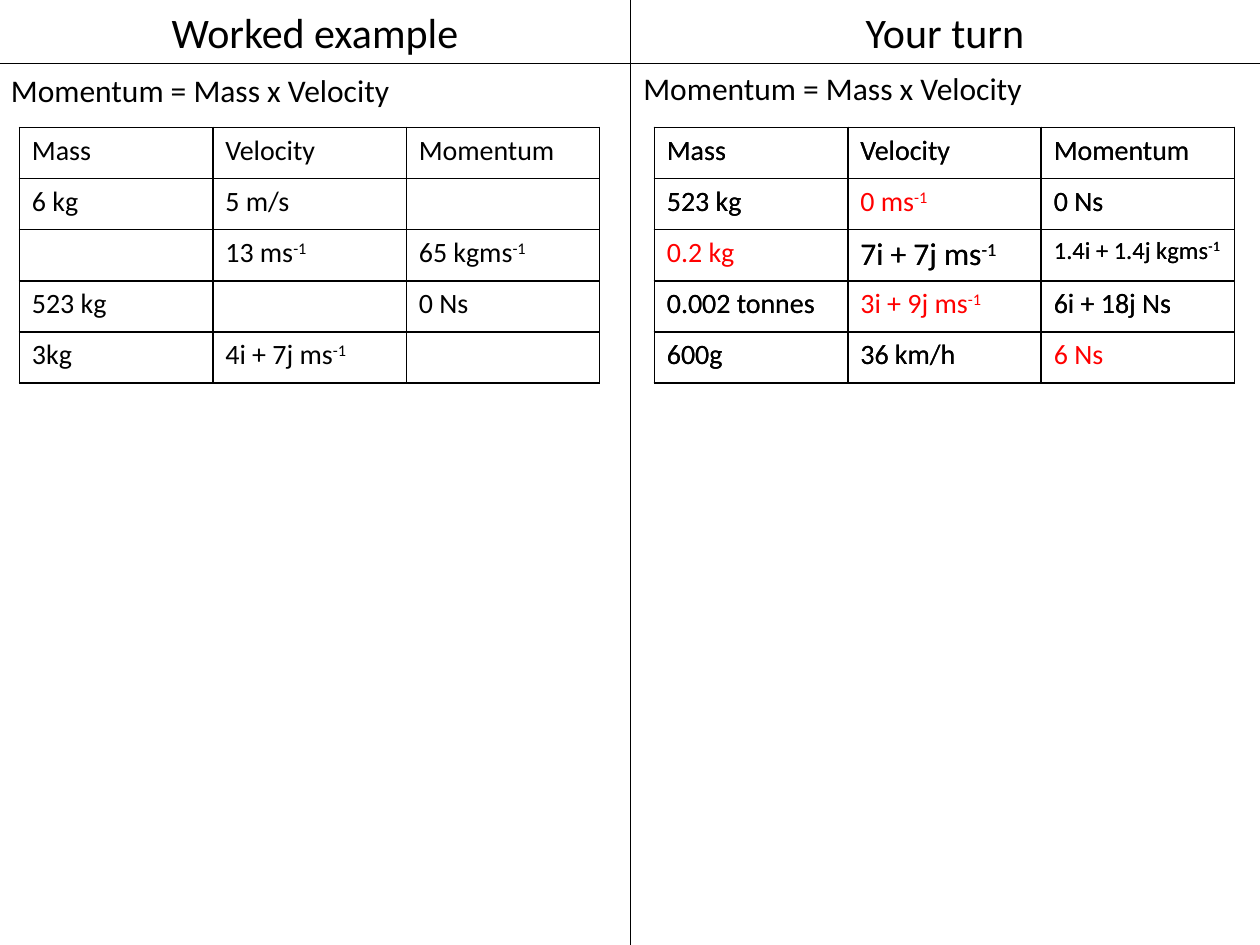
import pptx
import pptx.dml.color
import pptx.enum.shapes
import pptx.enum.text
import pptx.util
from lxml import etree
from pptx.oxml.ns import qn
from pptx.util import Cm, Pt

COLORS = {"black": "000000", "answer": "FF0000"}
FONT = "Calibri"
SLIDE_WIDTH, SLIDE_HEIGHT = 25.4, 19.05
HALF_WIDTH, HEADING_HEIGHT = SLIDE_WIDTH / 2, 1.27
COLUMN_WIDTH, ROW_HEIGHT = 3.9, 1.03


def add_text(paragraph, text, size, color="black"):
    """Write text run by run; the part after ^ is superscript."""
    for index, part in enumerate(text.split("^")):
        run = paragraph.add_run()
        run.text = part
        run.font.name = FONT
        run.font.size = Pt(size)
        run.font.color.rgb = pptx.dml.color.RGBColor.from_string(COLORS[color])
        if index:
            run._r.get_or_add_rPr().set("baseline", "30000")


def add_momentum_table(slide, left, rows, answers=(), sizes=None):
    """Add a bordered table; texts listed in answers are coloured."""
    frame = slide.shapes.add_table(
        len(rows), 3, Cm(left), Cm(2.57), Cm(3 * COLUMN_WIDTH), Cm(len(rows) * ROW_HEIGHT))
    table = frame.table
    table.first_row = False
    table.horz_banding = False
    for column in table.columns:
        column.width = Cm(COLUMN_WIDTH)
    for row_index, row in enumerate(rows):
        table.rows[row_index].height = Cm(ROW_HEIGHT)
        for column_index, text in enumerate(row):
            cell = table.cell(row_index, column_index)
            cell.fill.background()
            properties = cell._tc.get_or_add_tcPr()
            for position, side in enumerate(("a:lnL", "a:lnR", "a:lnT", "a:lnB")):
                border = etree.Element(qn(side), w=str(Pt(1)))
                fill = etree.SubElement(border, qn("a:solidFill"))
                etree.SubElement(fill, qn("a:srgbClr"), val=COLORS["black"])
                properties.insert(position, border)
            if text:
                add_text(cell.text_frame.paragraphs[0], text, (sizes or {}).get(text, 16),
                         "answer" if text in answers else "black")


presentation = pptx.Presentation()
presentation.slide_width = Cm(SLIDE_WIDTH)
presentation.slide_height = Cm(SLIDE_HEIGHT)
slide = presentation.slides.add_slide(presentation.slide_layouts[5])

# Dividing lines
for x1, y1, x2, y2 in ((0, HEADING_HEIGHT, SLIDE_WIDTH, HEADING_HEIGHT),
                       (HALF_WIDTH, 0, HALF_WIDTH, SLIDE_HEIGHT)):
    line = slide.shapes.add_connector(
        pptx.enum.shapes.MSO_CONNECTOR.STRAIGHT, Cm(x1), Cm(y1), Cm(x2), Cm(y2))
    line.line.color.rgb = pptx.dml.color.RGBColor.from_string(COLORS["black"])
    line.line.width = Pt(0.5)
    etree.SubElement(line._element.spPr, qn("a:effectLst"))

# Headings and formulas; the left heading is the slide title
title = slide.shapes.title
heading, left_formula, right_formula = (slide.shapes.add_textbox(0, 0, 0, 0) for _ in range(3))
formula = "Momentum = Mass x Velocity"
for shape, text, left, top, height, size, alignment in (
        (title, "Worked example", 0, 0, HEADING_HEIGHT, 24, "CENTER"),
        (heading, "Your turn", HALF_WIDTH, 0, HEADING_HEIGHT, 24, "CENTER"),
        (left_formula, formula, -0.03, 1.3, 1.03, 18, "LEFT"),
        (right_formula, formula, 12.72, 1.27, 1.03, 18, "LEFT")):
    shape.left, shape.top = Cm(left), Cm(top)
    shape.width, shape.height = Cm(HALF_WIDTH), Cm(height)
    text_frame = shape.text_frame
    text_frame.word_wrap = True
    text_frame.auto_size = pptx.enum.text.MSO_AUTO_SIZE.SHAPE_TO_FIT_TEXT
    text_frame.vertical_anchor = pptx.enum.text.MSO_ANCHOR.TOP
    paragraph = text_frame.paragraphs[0]
    paragraph.alignment = getattr(pptx.enum.text.PP_ALIGN, alignment)
    add_text(paragraph, text, size)

# Worked example table
header = ("Mass", "Velocity", "Momentum")
add_momentum_table(slide, 0.39, (
    header,
    ("6 kg", "5 m/s", ""),
    ("", "13 ms^-1", "65 kgms^-1"),
    ("523 kg", "", "0 Ns"),
    ("3kg", "4i + 7j ms^-1", "")))

# Your turn: questions with gaps, then the answers on top
solved = (
    header,
    ("523 kg", "0 ms^-1", "0 Ns"),
    ("0.2 kg", "7i + 7j ms^-1", "1.4i + 1.4j kgms^-1"),
    ("0.002 tonnes", "3i + 9j ms^-1", "6i + 18j Ns"),
    ("600g", "36 km/h", "6 Ns"))
answers = ("0 ms^-1", "0.2 kg", "3i + 9j ms^-1", "6 Ns")
questions = [["" if text in answers else text for text in row] for row in solved]
sizes = {"7i + 7j ms^-1": 18, "1.4i + 1.4j kgms^-1": 14}
for rows in (questions, solved):
    add_momentum_table(slide, 13.19, rows, answers, sizes)

presentation.save("out.pptx")
